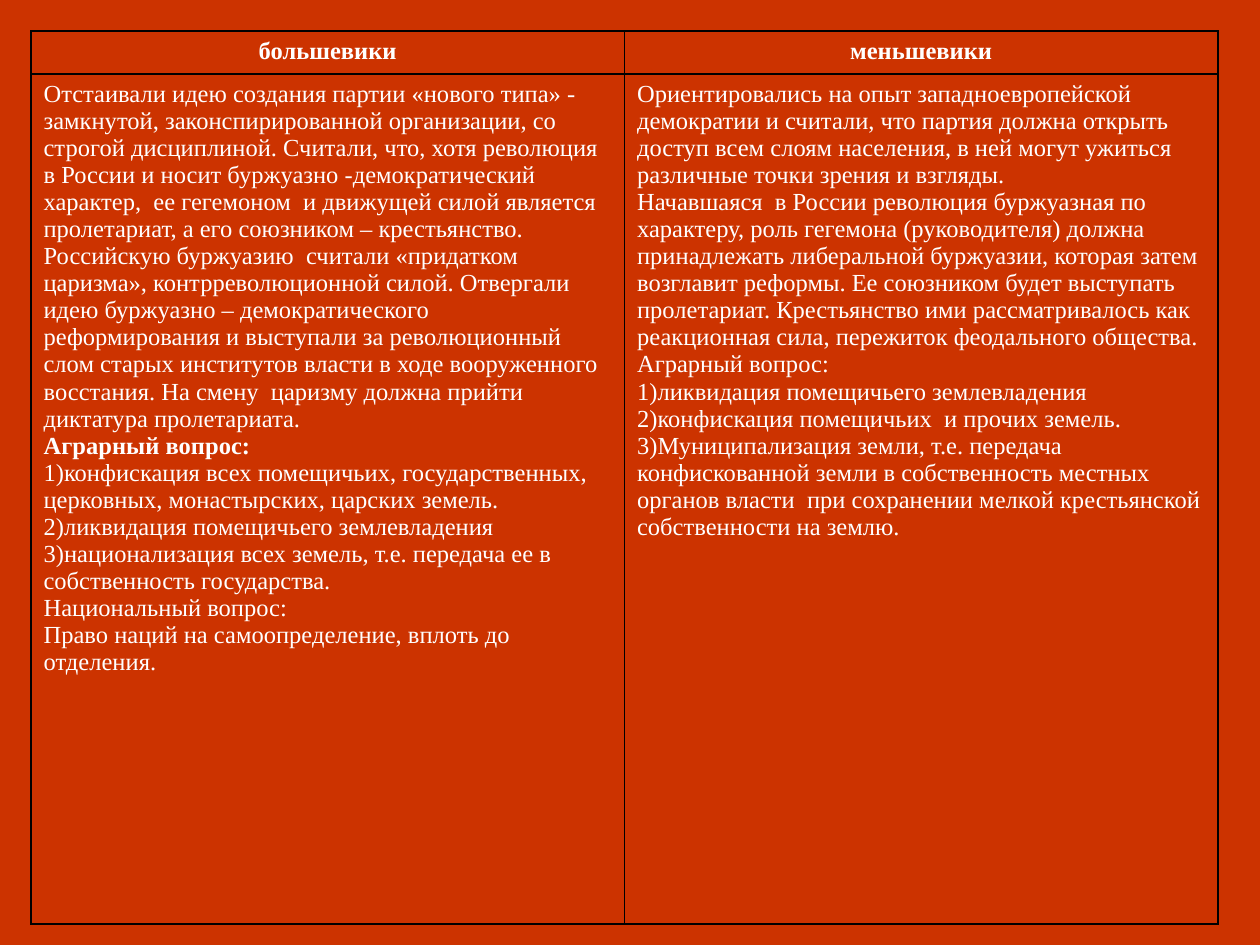
from lxml import etree
from pptx import Presentation
from pptx import util as u
from pptx.dml.color import RGBColor
from pptx.enum import text
from pptx.oxml import ns

PX = u.Inches(1) / 126
COLORS = {"background": "CC3300", "text": "FFFFFF", "border": "000000"}
FONT = "Times New Roman"
PLAIN, BOLD, NUMBERED = {}, {"bold": True}, {"numbered": True}

PARTIES = {
    "большевики": [
        ("Отстаивали идею создания партии «нового типа» - замкнутой, "
         "законспирированной организации, со строгой дисциплиной. Считали, что, "
         "хотя революция в России и носит буржуазно -демократический характер,  "
         "ее гегемоном  и движущей силой является пролетариат, а его союзником – "
         "крестьянство. Российскую буржуазию  считали «придатком царизма», "
         "контрреволюционной силой. Отвергали идею буржуазно – демократического "
         "реформирования и выступали за революционный слом старых институтов "
         "власти в ходе вооруженного восстания. На смену  царизму должна прийти "
         "диктатура пролетариата.", PLAIN),
        ("Аграрный вопрос:", BOLD),
        ("конфискация всех помещичьих, государственных, церковных, "
         "монастырских, царских земель.", NUMBERED),
        ("ликвидация помещичьего землевладения", NUMBERED),
        ("национализация всех земель, т.е. передача ее в собственность "
         "государства.", NUMBERED),
        ("Национальный вопрос:", PLAIN),
        ("Право наций на самоопределение, вплоть до отделения.", PLAIN),
    ],
    "меньшевики": [
        ("Ориентировались на опыт западноевропейской демократии и считали, что "
         "партия должна открыть доступ всем слоям населения, в ней могут ужиться "
         "различные точки зрения и взгляды.", PLAIN),
        ("Начавшаяся  в России революция буржуазная по характеру, роль гегемона "
         "(руководителя) должна принадлежать либеральной буржуазии, которая затем "
         "возглавит реформы. Ее союзником будет выступать пролетариат. "
         "Крестьянство ими рассматривалось как реакционная сила, пережиток "
         "феодального общества.", PLAIN),
        ("Аграрный вопрос:", PLAIN),
        ("ликвидация помещичьего землевладения", NUMBERED),
        ("конфискация помещичьих  и прочих земель.", NUMBERED),
        ("Муниципализация земли, т.е. передача конфискованной земли в "
         "собственность местных органов власти  при сохранении мелкой "
         "крестьянской собственности на землю.", NUMBERED),
    ],
}


def px(length):
    return u.Emu(round(length * PX))


def add_child(parent, tag, **attributes):
    return etree.SubElement(parent, ns.qn(tag), attributes)


def write(para, words, bold=False, numbered=False, align=text.PP_ALIGN.LEFT):
    para.alignment = align
    span = para.add_run()
    span.text = words
    span.font.name = FONT
    span.font.size = u.Pt(14)
    span.font.bold = bold
    span.font.color.rgb = RGBColor.from_string(COLORS["text"])
    if numbered:
        add_child(para._p.get_or_add_pPr(), "a:buAutoNum", type="arabicParenR")


def style_cell(cell):
    properties = cell._tc.get_or_add_tcPr()
    for side in ("a:lnL", "a:lnR", "a:lnT", "a:lnB"):
        line = add_child(properties, side, w=str(u.Pt(1)))
        fill = add_child(line, "a:solidFill")
        add_child(fill, "a:srgbClr", val=COLORS["border"])
    cell.fill.background()


def fill_cell(cell, entries):
    style_cell(cell)
    frame = cell.text_frame
    for index, (words, look) in enumerate(entries):
        para = frame.add_paragraph() if index else frame.paragraphs[0]
        write(para, words, **look)


def add_comparison(page, left, top, width, header_height, body_height):
    frame = page.shapes.add_table(
        2, len(PARTIES), px(left), px(top), px(width), px(header_height + body_height))
    table = frame.table
    table.first_row = table.horz_banding = False
    table.rows[0].height = px(header_height)
    table.rows[1].height = px(body_height)
    heading = {"bold": True, "align": text.PP_ALIGN.CENTER}
    for column, (party, views) in enumerate(PARTIES.items()):
        table.columns[column].width = px(width / len(PARTIES))
        fill_cell(table.cell(0, column), [(party, heading)])
        fill_cell(table.cell(1, column), views)


def main():
    deck = Presentation()
    deck.slide_width, deck.slide_height = px(1260), px(945)
    page = deck.slides.add_slide(deck.slide_layouts[6])
    page.background.fill.solid()
    page.background.fill.fore_color.rgb = RGBColor.from_string(COLORS["background"])
    add_comparison(page, left=31, top=31, width=1187, header_height=43, body_height=850)
    deck.save("out.pptx")


if __name__ == "__main__":
    main()
